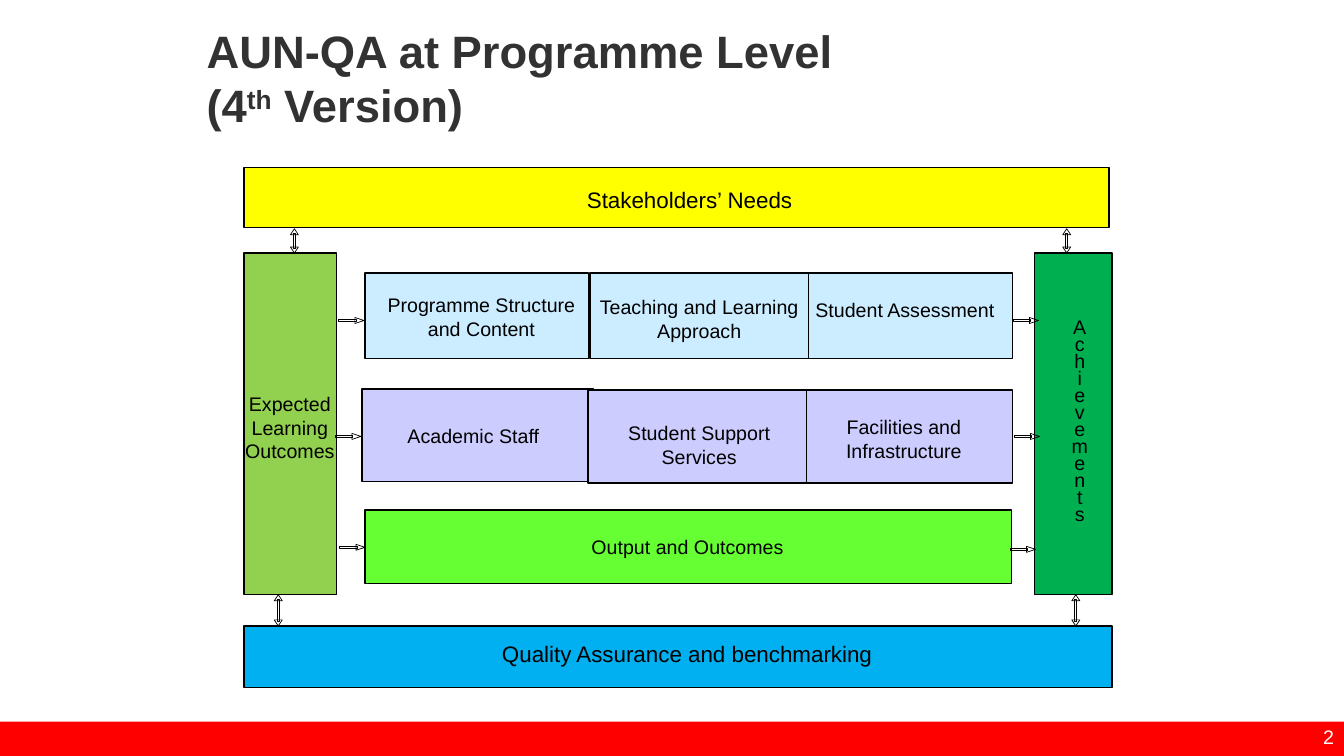
import pptx
import pptx.util
import pptx.dml.color
import pptx.enum.shapes
import pptx.enum.text
from dataclasses import dataclass

Inches = pptx.util.Inches
Pt = pptx.util.Pt
ALIGN = pptx.enum.text.PP_ALIGN
ANCHOR = pptx.enum.text.MSO_ANCHOR


@dataclass(frozen=True)
class Theme:
    font: str = "Arial"
    ink: str = "000000"
    head: str = "323232"
    white: str = "FFFFFF"
    red: str = "FF0000"
    yellow: str = "FFFF00"
    blue: str = "00B0F0"
    lime: str = "66FF33"
    leaf: str = "92D050"
    green: str = "00B050"
    sky: str = "CCECFF"
    lilac: str = "CCCCFF"
    title: float = 32.4
    large: float = 16
    body: float = 14
    edge: float = 1
    thin: float = 0.5


T = Theme()

# Text pieces with their superscript height in thousandths of a percent
TITLE = [("AUN-QA at Programme Level \n(4", 0), ("th", 30000), (" Version)", 0)]
PAGE = "2"

# left, top, width, height, fill
BOXES = [
    (3.62, 2.71, 2.22, 0.85, T.sky),
    (5.85, 2.71, 2.21, 0.85, T.sky),
    (8.02, 2.71, 2.02, 0.85, T.sky),
    (3.59, 3.86, 2.30, 0.92, T.lilac),
    (5.83, 3.87, 2.22, 0.92, T.lilac),
    (8.00, 3.87, 2.04, 0.92, T.lilac),
    (3.62, 5.06, 6.41, 0.73, T.lime),
    (2.42, 1.66, 8.58, 0.60, T.yellow),
    (2.42, 6.21, 8.61, 0.61, T.blue),
    (2.42, 2.51, 0.92, 3.39, T.leaf),
    (10.26, 2.51, 0.77, 3.39, T.green),
]

# text, left, top, width, height, size, wrap
LABELS = [
    ("Stakeholders’ Needs", 5.81, 1.85, 2.06, 0.27, T.large, False),
    ("Quality Assurance and benchmarking", 4.96, 6.35, 3.71, 0.27, T.large, False),
    ("Expected\nLearning\nOutcomes", 2.43, 3.89, 0.89, 0.71, T.body, False),
    ("Output and Outcomes", 3.80, 5.31, 6.04, 0.24, T.body, True),
    ("Programme Structure and Content", 3.78, 2.91, 1.99, 0.47, T.body, True),
    ("Teaching and Learning Approach", 5.94, 2.93, 1.99, 0.47, T.body, True),
    ("Student Assessment", 7.98, 2.96, 1.99, 0.24, T.body, True),
    ("Academic Staff", 3.70, 4.21, 1.99, 0.24, T.body, True),
    ("Student Support Services", 5.94, 4.18, 1.99, 0.47, T.body, True),
    ("Facilities and Infrastructure", 7.97, 4.12, 1.99, 0.47, T.body, True),
]

STACK = "Achievements"
STACK_X, STACK_Y, STEP = 10.71, 3.12, 1.86 / 11

# left end, middle height
FLOWS = [(3.36, 3.18), (10.05, 3.18), (3.33, 4.33), (10.06, 4.33),
         (3.37, 5.43), (10.02, 5.45)]
# middle, top, bottom
LINKS = [(2.92, 2.27, 2.51), (10.58, 2.27, 2.51),
         (2.76, 5.90, 6.21), (10.67, 5.90, 6.21)]


def rgb(code):
    return pptx.dml.color.RGBColor.from_string(code)


def box(slide, x, y, w, h, fill, line=True):
    kind = pptx.enum.shapes.MSO_SHAPE.RECTANGLE
    shape = slide.shapes.add_shape(kind, *map(Inches, (x, y, w, h)))
    shape.shadow.inherit = False
    shape.fill.solid()
    shape.fill.fore_color.rgb = rgb(fill)
    if line:
        shape.line.color.rgb = rgb(T.ink)
        shape.line.width = Pt(T.edge)
    else:
        shape.line.fill.background()


def write(slide, text, x, y, w, h, size=T.body, color=T.ink, bold=False,
          align=ALIGN.CENTER, anchor=ANCHOR.TOP, wrap=True, pad=(0, 0)):
    """Add a text box; text is a string or a list of (string, raise) pieces."""
    frame = slide.shapes.add_textbox(*map(Inches, (x, y, w, h))).text_frame
    frame.word_wrap = wrap
    frame.vertical_anchor = anchor
    frame.margin_left = frame.margin_right = Inches(pad[0])
    frame.margin_top = frame.margin_bottom = Inches(pad[1])
    para = frame.paragraphs[0]
    para.alignment = align
    for piece, rise in [(text, 0)] if isinstance(text, str) else text:
        for i, part in enumerate(piece.split("\n")):
            if i:
                para.add_line_break()
            run = para.add_run()
            run.text = part
            run.font.name = T.font
            run.font.size = Pt(size)
            run.font.bold = bold
            run.font.color.rgb = rgb(color)
            if rise:
                run.font._element.set("baseline", str(rise))


def outline(slide, loops):
    """Draw closed loops of points as one unfilled shape."""
    loops = [[(Inches(x), Inches(y)) for x, y in loop] for loop in loops]
    pen = slide.shapes.build_freeform(*loops[0][0])
    for i, loop in enumerate(loops):
        if i:
            pen.move_to(*loop[0])
        pen.add_line_segments(loop[1:], close=True)
    shape = pen.convert_to_shape()
    shape.shadow.inherit = False
    shape.fill.background()
    shape.line.color.rgb = rgb(T.ink)
    shape.line.width = Pt(T.thin)


def bar(x1, y1, x2, y2):
    return [(x1, y1), (x2, y1), (x2, y2), (x1, y2)]


def flow(slide, x, y):
    """Arrow to the right."""
    tip = [(x + 0.16, y - 0.03), (x + 0.25, y), (x + 0.16, y + 0.03)]
    outline(slide, [bar(x, y - 0.01, x + 0.17, y + 0.01), tip])


def link(slide, x, top, end):
    """Upright arrow with two heads."""
    tips = [[(x - 0.04, y + d), (x, y), (x + 0.04, y + d)]
            for y, d in ((top, 0.06), (end, -0.06))]
    outline(slide, [bar(x - 0.01, top + 0.05, x + 0.01, end - 0.05), *tips])


def main():
    deck = pptx.Presentation()
    deck.slide_width, deck.slide_height = Inches(13.33), Inches(7.5)
    slide = deck.slides.add_slide(deck.slide_layouts[6])

    box(slide, 0, 7.16, 13.33, 0.34, T.red, line=False)
    write(slide, TITLE, 1.95, 0.28, 9.61, 0.98, size=T.title, color=T.head,
          bold=True, align=ALIGN.LEFT, anchor=ANCHOR.MIDDLE, pad=(0.1, 0.05))
    write(slide, PAGE, 10.22, 7.14, 3.11, 0.36, color=T.white,
          align=ALIGN.RIGHT, pad=(0.1, 0.05))

    for item in BOXES:
        box(slide, *item)
    for item in FLOWS:
        flow(slide, *item)
    for item in LINKS:
        link(slide, *item)
    for text, x, y, w, h, size, wrap in LABELS:
        write(slide, text, x, y, w, h, size=size, wrap=wrap)
    for i, char in enumerate(STACK):
        write(slide, char, STACK_X - 0.08, STACK_Y + i * STEP, 0.16, 0.24,
              wrap=False)

    deck.save("out.pptx")


if __name__ == "__main__":
    main()
